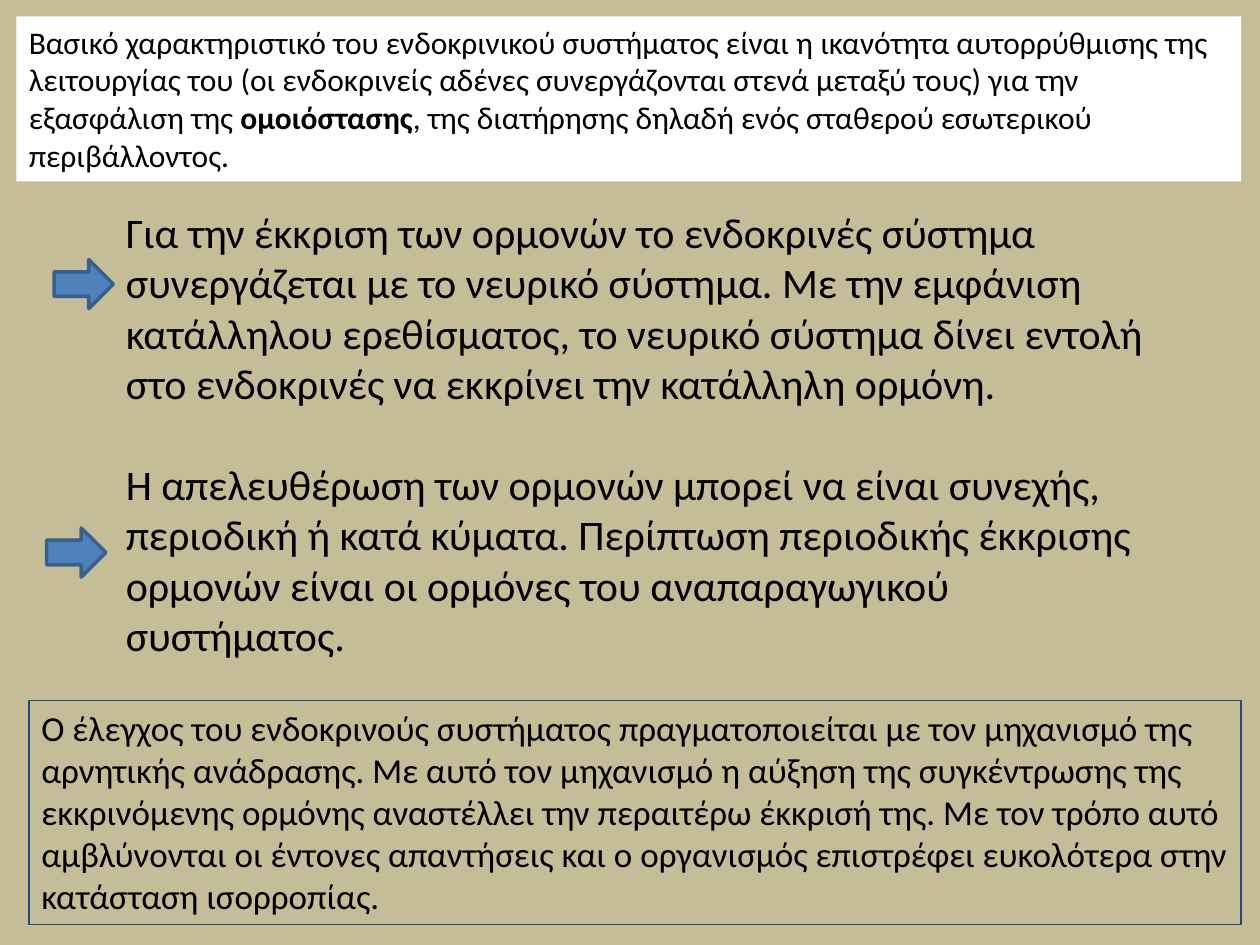
from pptx import Presentation
from pptx import util as u
from pptx.dml.color import RGBColor
from pptx.enum import shapes, text

COLORS = {
    "background": "C4BD97",
    "white": "FFFFFF",
    "text": "000000",
    "frame": "1F497D",
    "arrow": "4F81BD",
    "arrow_line": "3A5F8C",
}

prs = Presentation()
prs.slide_width, prs.slide_height = u.Inches(10), u.Inches(7.5)
col, row = prs.slide_width / 100, prs.slide_height / 75
s = prs.slides.add_slide(prs.slide_layouts[6])
s.background.fill.solid()
s.background.fill.fore_color.rgb = RGBColor.from_string(COLORS["background"])


def add_box(kind, left, top, width, height, fill=None, line=None, weight=0.75):
    sp = s.shapes.add_shape(kind, int(left * col), int(top * row),
                            int(width * col), int(height * row))
    sp.shadow.inherit = False
    if fill:
        sp.fill.solid()
        sp.fill.fore_color.rgb = RGBColor.from_string(COLORS[fill])
    else:
        sp.fill.background()
    if line:
        sp.line.color.rgb = RGBColor.from_string(COLORS[line])
        sp.line.width = u.Pt(weight)
    else:
        sp.line.fill.background()
    return sp


def write(sp, paragraphs, size, gap=0):
    tf = sp.text_frame
    tf.word_wrap = True
    tf.auto_size = text.MSO_AUTO_SIZE.SHAPE_TO_FIT_TEXT
    tf.vertical_anchor = text.MSO_ANCHOR.TOP
    for i, runs in enumerate(paragraphs):
        p = tf.add_paragraph() if i else tf.paragraphs[0]
        p.alignment = text.PP_ALIGN.LEFT
        p.space_before = u.Pt(gap if i else 0)
        for j, words in enumerate(runs):
            r = p.add_run()
            r.text = words
            r.font.name = "Calibri"
            r.font.size = u.Pt(size)
            r.font.bold = j % 2 == 1
            r.font.color.rgb = RGBColor.from_string(COLORS["text"])


rect, arrow = shapes.MSO_SHAPE.RECTANGLE, shapes.MSO_SHAPE.RIGHT_ARROW

hormones = s.shapes.add_textbox(int(9 * col), int(15.9 * row),
                                int(82.7 * col), int(37.4 * row))
write(hormones, [
    ["Για την έκκριση των ορμονών το ενδοκρινές σύστημα συνεργάζεται με το "
     "νευρικό σύστημα. Με την εμφάνιση κατάλληλου ερεθίσματος, το νευρικό "
     "σύστημα δίνει εντολή στο ενδοκρινές να εκκρίνει την κατάλληλη ορμόνη."],
    ["Η απελευθέρωση των ορμονών μπορεί να είναι συνεχής, περιοδική ή κατά "
     "κύματα. Περίπτωση περιοδικής έκκρισης ορμονών είναι οι ορμόνες του "
     "αναπαραγωγικού συστήματος."],
], 24, gap=28.8)

feedback = add_box(rect, 2.3, 55.6, 96.2, 17.8, line="frame")
write(feedback, [
    ["Ο έλεγχος του ενδοκρινούς συστήματος πραγματοποιείται με τον μηχανισμό "
     "της αρνητικής ανάδρασης. Με αυτό τον μηχανισμό η αύξηση της "
     "συγκέντρωσης της εκκρινόμενης ορμόνης αναστέλλει την περαιτέρω έκκρισή "
     "της. Με τον τρόπο αυτό αμβλύνονται οι έντονες απαντήσεις και ο "
     "οργανισμός επιστρέφει ευκολότερα στην κατάσταση ισορροπίας."],
], 20)

for left, top in [(4.3, 20.6), (3.7, 41.9)]:
    add_box(arrow, left, top, 4.7, 3.9, "arrow", "arrow_line", 2)

homeostasis = add_box(rect, 1.3, 1.3, 97.2, 13.1, fill="white")
write(homeostasis, [
    ["Βασικό χαρακτηριστικό του ενδοκρινικού συστήματος είναι η ικανότητα "
     "αυτορρύθμισης της λειτουργίας του (οι ενδοκρινείς αδένες συνεργάζονται "
     "στενά μεταξύ τους) για την εξασφάλιση της ",
     "ομοιόστασης",
     ", της διατήρησης δηλαδή ενός σταθερού εσωτερικού περιβάλλοντος."],
], 18)

prs.save("out.pptx")
